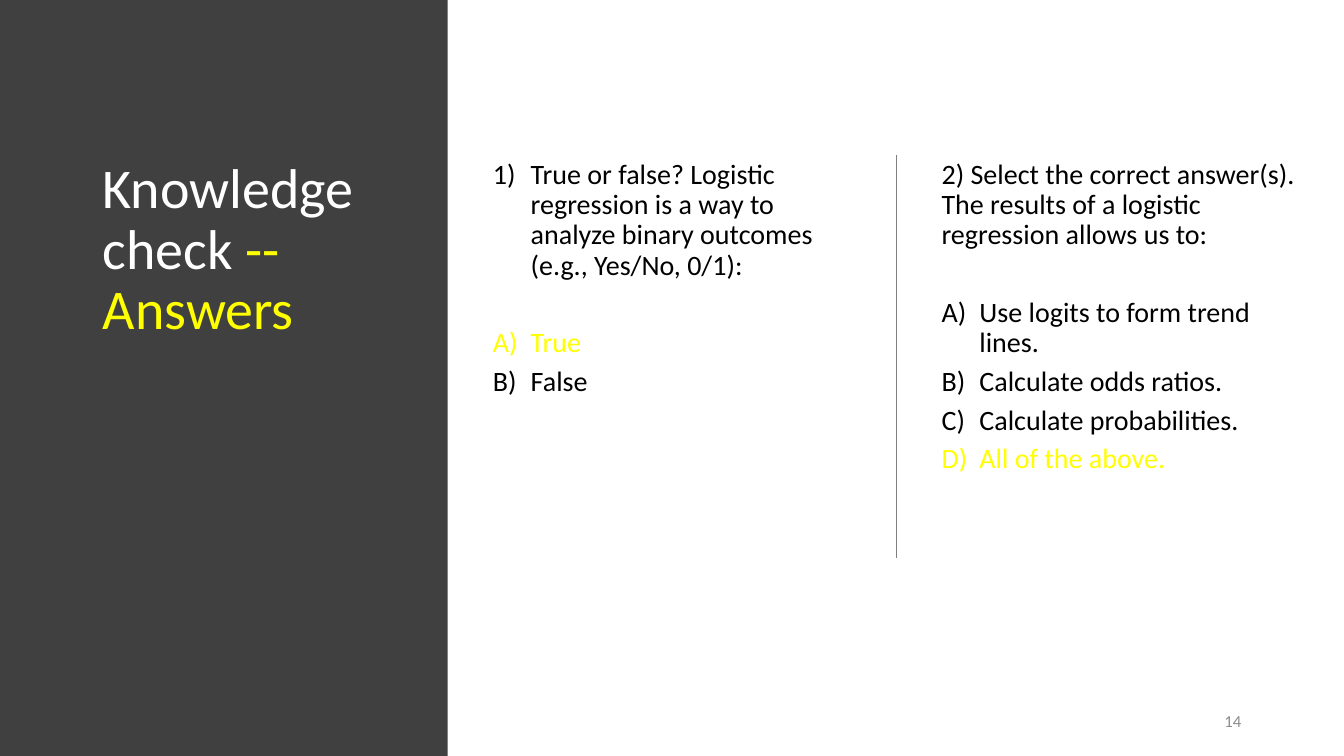
from lxml import etree
from pptx import Presentation
from pptx import util as u
from pptx.dml.color import RGBColor
from pptx.enum import shapes, text
from pptx.oxml import ns

WHITE, BLACK, YELLOW = "FFFFFF", "000000", "FFFF00"
TOP, BODY_HEIGHT = 1.54, 4.77


def color(value):
    """Turn a hex string into a colour."""
    return RGBColor.from_string(value)


def style(span, size, value):
    """Set the font of a run."""
    span.font.name = "Calibri"
    span.font.size = u.Pt(size)
    span.font.color.rgb = color(value)


def add_box(page, box):
    """Add a wrapping text box and return its frame."""
    frame = page.shapes.add_textbox(*map(u.Inches, box)).text_frame
    frame.word_wrap = True
    return frame


def number(para, scheme):
    """Give a paragraph an automatic number and a hanging indent."""
    props = para._p.get_or_add_pPr()
    props.set("marL", str(u.Inches(0.375)))
    props.set("indent", str(u.Inches(-0.375)))
    etree.SubElement(props, ns.qn("a:buAutoNum"), type=scheme)


def add_panel(page, box):
    """Add the dark side panel."""
    panel = page.shapes.add_shape(shapes.MSO_SHAPE.RECTANGLE, *map(u.Inches, box))
    panel.shadow.inherit = False
    panel.fill.solid()
    panel.fill.fore_color.rgb = color("404040")
    panel.line.fill.background()


def add_title(page, box):
    """Add the two-colour title."""
    para = add_box(page, box).paragraphs[0]
    para.line_spacing = 0.9
    para.text = "Knowledge check "
    para.add_run().text = "--"
    para.add_line_break()
    para.add_run().text = "Answers"
    for span, value in zip(para.runs, (WHITE, YELLOW, YELLOW)):
        style(span, 40, value)


def add_question(page, box, question, answers, correct, numbered):
    """Add a question with lettered answers, the correct one highlighted."""
    frame = add_box(page, box)
    for index, line in enumerate([question, *answers]):
        para = frame.paragraphs[0] if index == 0 else frame.add_paragraph()
        para.text = line
        para.line_spacing = 0.9
        para.space_before = u.Pt(28 if index == 1 else 0)
        para.space_after = u.Pt(6)
        if index:
            number(para, "alphaUcParenR")
        elif numbered:
            number(para, "arabicParenR")
        style(para.runs[0], 20, YELLOW if line == correct else BLACK)


def add_divider(page, left, top, height):
    """Add the vertical rule between the questions."""
    ends = map(u.Inches, (left, top, left, top + height))
    line = page.shapes.add_connector(shapes.MSO_CONNECTOR.STRAIGHT, *ends)
    line.line.color.rgb = color("808080")
    line.line.width = u.Pt(1)
    etree.SubElement(line._element.spPr, ns.qn("a:effectLst"))


def add_page_number(page, box):
    """Add the page number at the lower right."""
    frame = add_box(page, box)
    frame.vertical_anchor = text.MSO_ANCHOR.MIDDLE
    para = frame.paragraphs[0]
    para.text = "14"
    para.alignment = text.PP_ALIGN.RIGHT
    style(para.runs[0], 12, "8C8C8C")


def main():
    """Build and save the slide."""
    deck = Presentation()
    deck.slide_width, deck.slide_height = u.Inches(13.33), u.Inches(7.5)
    page = deck.slides.add_slide(deck.slide_layouts[6])
    add_panel(page, (0, 0, 4.44, 7.5))
    add_title(page, (0.92, TOP, 3.17, BODY_HEIGHT))
    add_question(
        page, (4.79, TOP, 3.75, BODY_HEIGHT),
        "True or false? Logistic regression is a way to analyze binary outcomes (e.g., Yes/No, 0/1):",
        ["True", "False"], "True", numbered=True)
    add_divider(page, 8.89, TOP, 4)
    add_question(
        page, (9.24, TOP, 3.75, BODY_HEIGHT),
        "2) Select the correct answer(s). The results of a logistic regression allows us to:",
        ["Use logits to form trend lines.", "Calculate odds ratios.",
         "Calculate probabilities.", "All of the above."],
        "All of the above.", numbered=False)
    add_page_number(page, (10.06, 6.95, 2.35, 0.4))
    deck.save("out.pptx")


if __name__ == "__main__":
    main()
